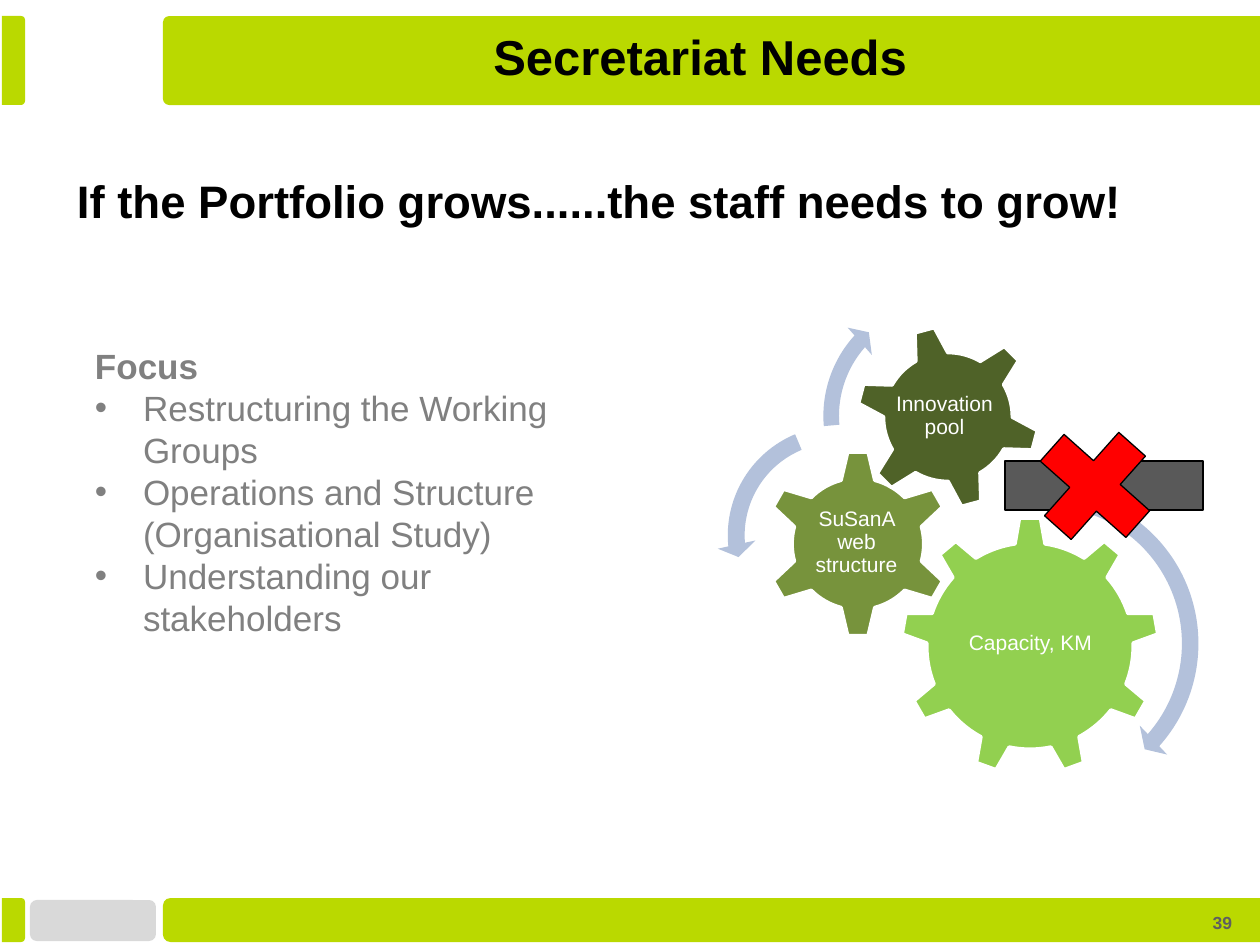
from dataclasses import dataclass

from lxml.etree import SubElement
from pptx import Presentation
from pptx.dml.color import RGBColor
from pptx.enum.shapes import MSO_SHAPE as Preset
from pptx.enum.text import MSO_ANCHOR as Anchor, PP_ALIGN as Align
from pptx.oxml.ns import qn
from pptx.util import Pt

PX = 914400 / 126  # EMU in one px
LIME, ARROW_BLUE, WHITE, BLACK, GREY = "BAD900", "B3C1DB", "FFFFFF", "000000", "808080"


def emu(px: float) -> int:
    return round(px * PX)


def colour(code: str) -> RGBColor:
    return RGBColor.from_string(code)


@dataclass
class Figure:
    """A filled preset shape; the box is left, top, width, height in px."""
    preset: Preset
    box: tuple[int, int, int, int]
    fill: str
    line: tuple[str, float] | None = None
    turn: float = 0
    adjust: tuple[float, ...] = ()


@dataclass
class Bar:
    """A band with two rounded corners, on the left side or the right."""
    box: tuple[int, int, int, int]
    turn: int
    rounding: float = 0.17


@dataclass
class Gear:
    figure: Figure
    label: str
    label_box: tuple[int, int, int, int]


@dataclass
class Line:
    text: str
    size: float
    hue: str
    bold: bool = False
    align: Align = Align.LEFT
    spacing: float = 1.0
    bullet: bool = False


def draw_figure(page, figure: Figure) -> None:
    shape = page.shapes.add_shape(figure.preset, *map(emu, figure.box))
    shape.shadow.inherit = False
    shape.rotation = figure.turn
    for index, value in enumerate(figure.adjust):
        shape.adjustments[index] = value
    shape.fill.solid()
    shape.fill.fore_color.rgb = colour(figure.fill)
    if figure.line:
        shape.line.color.rgb = colour(figure.line[0])
        shape.line.width = Pt(figure.line[1])
    else:
        shape.line.fill.background()


def draw_bar(page, bar: Bar) -> None:
    # The preset is rounded on top, so it is laid on its side about its centre
    left, top, width, height = bar.box
    shift = (width - height) / 2
    box = (left + shift, top - shift, height, width)
    draw_figure(page, Figure(Preset.ROUND_2_SAME_RECTANGLE, box, LIME,
                             turn=bar.turn, adjust=(bar.rounding, 0)))


def add_bullet(para, indent: int) -> None:
    properties = para._p.get_or_add_pPr()
    properties.set("marL", str(emu(indent)))
    properties.set("indent", str(-emu(indent)))
    SubElement(properties, qn("a:buFont")).set("typeface", "Arial")
    SubElement(properties, qn("a:buChar")).set("char", "•")


def draw_text(page, box: tuple[int, int, int, int], lines: list[Line],
              inset: tuple[int, int] = (0, 0), anchor: Anchor = Anchor.MIDDLE) -> None:
    frame = page.shapes.add_textbox(*map(emu, box)).text_frame
    side, end = map(emu, inset)
    frame_format = {"word_wrap": True, "vertical_anchor": anchor,
                    "margin_left": side, "margin_right": side,
                    "margin_top": end, "margin_bottom": end}
    for name, value in frame_format.items():
        setattr(frame, name, value)
    for index, line in enumerate(lines):
        para = frame.add_paragraph() if index else frame.paragraphs[0]
        para.alignment = line.align
        para.line_spacing = line.spacing
        if line.bullet:
            add_bullet(para, 48)
        span = para.add_run()
        span.text = line.text
        span.font.color.rgb = colour(line.hue)
        font_format = {"name": "Arial", "size": Pt(line.size), "bold": line.bold}
        for name, value in font_format.items():
            setattr(span.font, name, value)


def draw_gear(page, gear: Gear) -> None:
    draw_figure(page, gear.figure)
    label = Line(gear.label, 12, WHITE, align=Align.CENTER, spacing=0.9)
    draw_text(page, gear.label_box, [label], inset=(3, 3))


BARS = [
    Bar((163, 898, 1097, 44), 270),
    Bar((2, 16, 23, 89), 90),
    Bar((163, 16, 1097, 89), 270, 0.07),
    Bar((2, 898, 23, 44), 90),
]
RIM = (WHITE, 2)
GEARS = [
    Gear(Figure(Preset.GEAR_9, (901, 517, 258, 258), "92D050", RIM),
         "Capacity, KM", (953, 577, 155, 134)),
    Gear(Figure(Preset.GEAR_6, (764, 450, 188, 188), "77933C", RIM),
         "SuSanA web structure", (810, 496, 93, 93)),
    Gear(Figure(Preset.GEAR_6, (856, 325, 184, 184), "4F6228", RIM, turn=345),
         "Innovation pool", (893, 365, 103, 103)),
]
ARROWS = [
    Figure(Preset.CIRCULAR_ARROW, (879, 478, 331, 331), ARROW_BLUE,
           adjust=(0.05, 2.99, 24.94, 159.09, 0.06)),
    Figure(Preset.LEFT_CIRCULAR_ARROW, (717, 415, 241, 241), ARROW_BLUE,
           adjust=(0.07, 4.3, 104.89, 148.38, 0.08)),
    Figure(Preset.CIRCULAR_ARROW, (813, 286, 260, 260), ARROW_BLUE,
           adjust=(0.06, 3.94, 133.14, 105.08, 0.07)),
]
OUTLINE = (BLACK, 0.75)
CROSSED_BLOCK = [
    Figure(Preset.RECTANGLE, (1005, 461, 198, 49), "595959", OUTLINE),
    Figure(Preset.MATH_PLUS, (1017, 410, 156, 152), "FF0000", OUTLINE, turn=41.7),
]
FOCUS = ["Restructuring the Working Groups",
         "Operations and Structure (Organisational Study)",
         "Understanding our stakeholders"]


def main() -> None:
    deck = Presentation()
    deck.slide_width, deck.slide_height = emu(1260), emu(945)
    page = deck.slides.add_slide(deck.slide_layouts[6])

    # Frame of the page
    draw_figure(page, Figure(Preset.ROUNDED_RECTANGLE, (30, 900, 126, 41), "D9D9D9"))
    for bar in BARS:
        draw_bar(page, bar)
    draw_text(page, (868, 902, 377, 38),
              [Line("39", 10, "5F5F5F", True, Align.RIGHT, 1.2)], (13, 6), Anchor.TOP)

    # Title and focus list
    draw_text(page, (174, 16, 1052, 80),
              [Line("Secretariat Needs", 28, BLACK, True, Align.CENTER)])
    points = [Line(point, 20, GREY, bullet=True) for point in FOCUS]
    draw_text(page, (82, 296, 525, 391), [Line("Focus", 20, GREY, True), *points], (13, 0))

    # Gears with turning arrows, and the crossed-out block
    for gear in GEARS:
        draw_gear(page, gear)
    for figure in ARROWS + CROSSED_BLOCK:
        draw_figure(page, figure)

    # Headline
    draw_text(page, (64, 173, 1181, 55),
              [Line("If the Portfolio grows......the staff needs to grow!", 26, BLACK, True)],
              (13, 0))

    deck.save("out.pptx")


if __name__ == "__main__":
    main()
